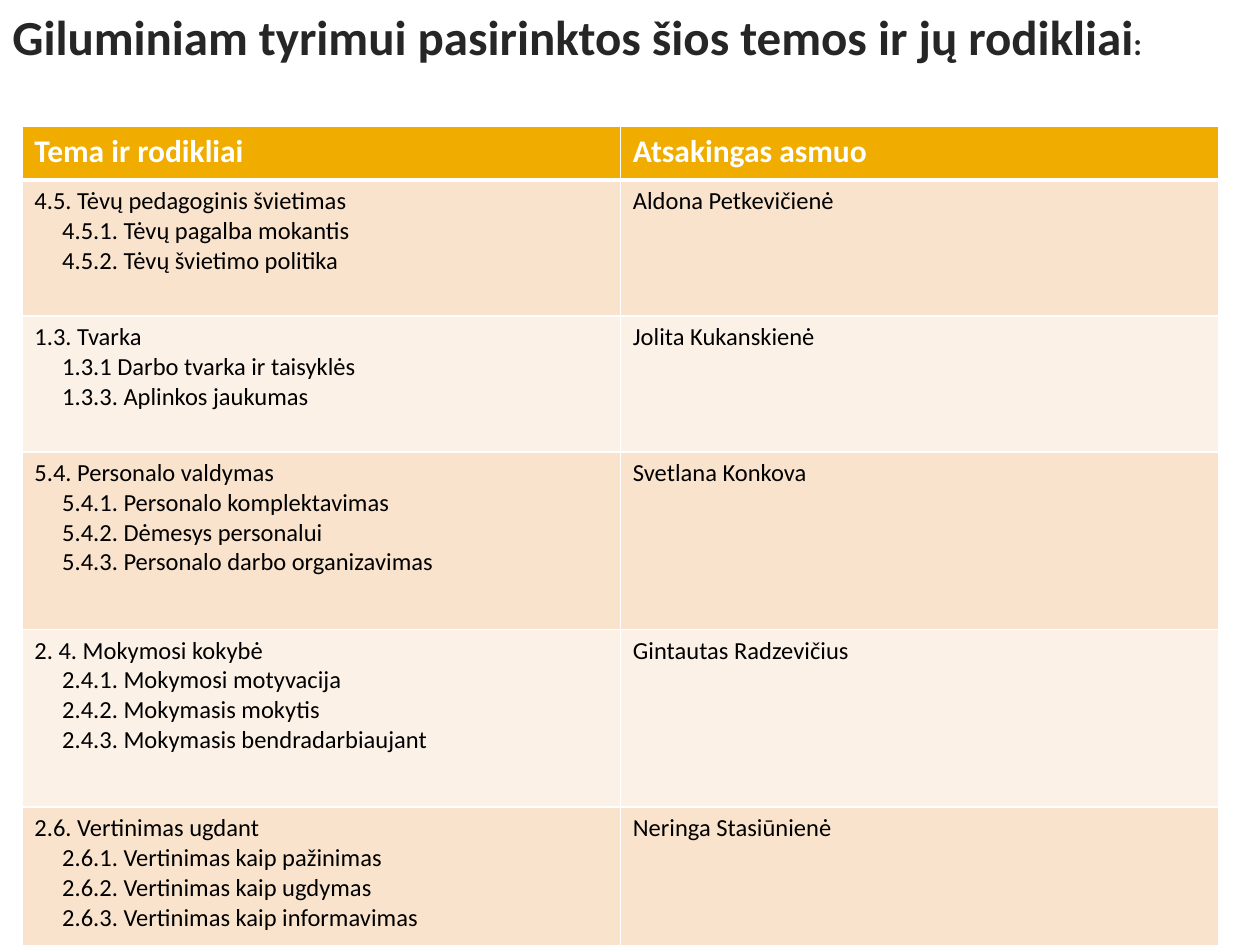
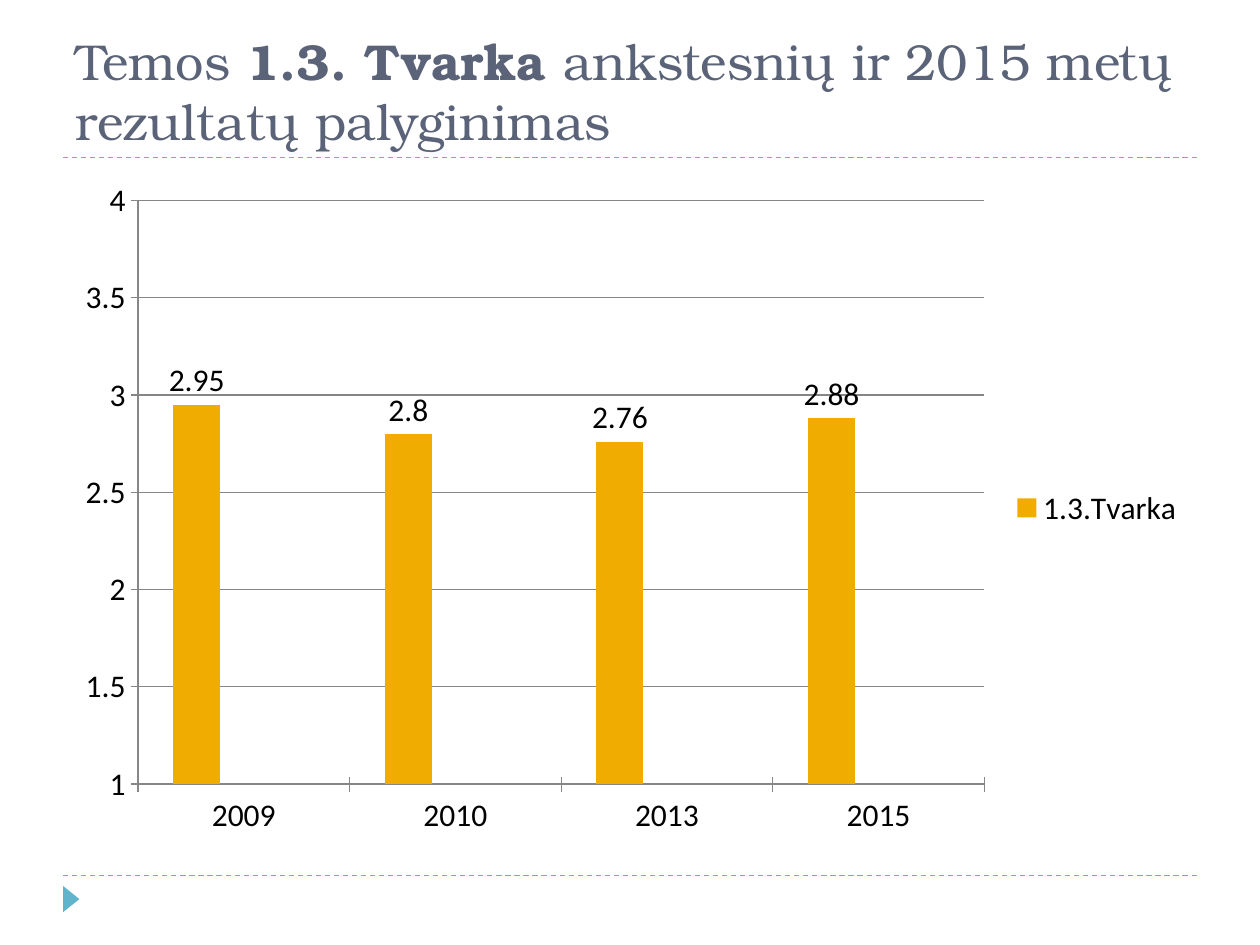
from dataclasses import dataclass

from lxml import etree
from pptx import Presentation
from pptx.chart.data import CategoryChartData
from pptx.dml.color import RGBColor
from pptx.enum.chart import (
    XL_CHART_TYPE, XL_LABEL_POSITION, XL_LEGEND_POSITION, XL_TICK_MARK)
from pptx.enum.dml import MSO_LINE
from pptx.enum.shapes import MSO_CONNECTOR, MSO_SHAPE
from pptx.enum.text import MSO_ANCHOR
from pptx.oxml.ns import qn
from pptx.util import Cm, Pt

COLUMN = XL_CHART_TYPE.COLUMN_CLUSTERED
ABOVE = XL_LABEL_POSITION.OUTSIDE_END
RIGHT = XL_LEGEND_POSITION.RIGHT
CROSS = XL_TICK_MARK.CROSS
DASH = MSO_LINE.DASH
STRAIGHT = MSO_CONNECTOR.STRAIGHT
ARROW = MSO_SHAPE.ISOSCELES_TRIANGLE
TOP, BOTTOM = MSO_ANCHOR.TOP, MSO_ANCHOR.BOTTOM


@dataclass(frozen=True)
class Theme:
    body: str = "Calibri"
    serif: str = "TeX Gyre Bonum"
    gold: str = "F0AD00"
    teal: str = "60B5CC"
    rose: str = "E66C7D"
    slate: str = "5A6378"
    dark: str = "262626"
    black: str = "000000"
    white: str = "FFFFFF"
    grid: str = "868686"
    bands: tuple = ("F9E3CC", "FCF1E7")
    head: float = 28
    title: float = 28.8
    label: float = 18
    small: float = 14


THEME = Theme()

TOPICS = [
    ("Aldona Petkevičienė", "4.5. Tėvų pedagoginis švietimas",
     "4.5.1. Tėvų pagalba mokantis", "4.5.2. Tėvų švietimo politika"),
    ("Jolita Kukanskienė", "1.3. Tvarka",
     "1.3.1 Darbo tvarka ir taisyklės", "1.3.3. Aplinkos jaukumas"),
    ("Svetlana Konkova", "5.4. Personalo valdymas",
     "5.4.1. Personalo komplektavimas", "5.4.2. Dėmesys personalui",
     "5.4.3. Personalo darbo organizavimas"),
    ("Gintautas Radzevičius", "2. 4. Mokymosi kokybė",
     "2.4.1. Mokymosi motyvacija", "2.4.2. Mokymasis mokytis",
     "2.4.3. Mokymasis bendradarbiaujant"),
    ("Neringa Stasiūnienė", "2.6. Vertinimas ugdant",
     "2.6.1. Vertinimas kaip pažinimas", "2.6.2. Vertinimas kaip ugdymas",
     "2.6.3. Vertinimas kaip informavimas"),
]

YEARS = ["2009", "2010", "2013", "2015"]
SERIES = [
    ("1.3.Tvarka", [2.95, 2.8, 2.76, 2.88], THEME.gold),
    ("Series 2", [None] * 4, THEME.teal),
    ("Series 3", [None] * 4, THEME.rose),
]


def rgb(code):
    return RGBColor.from_string(code)


def paint(shape, color):
    shape.fill.solid()
    shape.fill.fore_color.rgb = rgb(color)


def add_run(para, text, size, color, font=THEME.body, bold=False):
    run = para.add_run()
    run.text = text
    run.font.name = font
    run.font.size = Pt(size)
    run.font.bold = bold
    run.font.color.rgb = rgb(color)


# Dashed rules and corner arrow, shared by all slides
def add_rule(slide, y):
    rule = slide.shapes.add_connector(
        STRAIGHT, Cm(1.27), Cm(y), Cm(24.13), Cm(y))
    rule.line.color.rgb = rgb(THEME.teal)
    rule.line.width = Pt(0.75)
    rule.line.dash_style = DASH
    etree.SubElement(rule.element.spPr, qn("a:effectLst"))


def new_slide(deck):
    slide = deck.slides.add_slide(deck.slide_layouts[6])
    for y in (17.65, 3.18):
        add_rule(slide, y)
    arrow = slide.shapes.add_shape(
        ARROW, Cm(1.17), Cm(17.96), Cm(0.53), Cm(0.33))
    arrow.rotation = 90
    arrow.shadow.inherit = False
    paint(arrow, THEME.teal)
    arrow.line.fill.background()
    return slide


def add_title(slide, box, runs, anchor):
    frame = slide.shapes.add_textbox(*map(Cm, box)).text_frame
    frame.word_wrap = True
    frame.vertical_anchor = anchor
    for text, style in runs:
        add_run(frame.paragraphs[0], text, **style)


# Table of topics
def add_edges(cell, base):
    props = cell._tc.get_or_add_tcPr()
    for side, width in zip("LRTB", (1, 1, 1, base)):
        edge = etree.SubElement(
            props, qn(f"a:ln{side}"), w=str(Pt(width)))
        fill = etree.SubElement(edge, qn("a:solidFill"))
        etree.SubElement(fill, qn("a:srgbClr"), val=THEME.white)


def fill_cell(cell, lines, band, size, color, bold=False, base=1):
    add_edges(cell, base)
    paint(cell, band)
    frame = cell.text_frame
    for i, line in enumerate(lines):
        para = frame.add_paragraph() if i else frame.paragraphs[0]
        if i:
            para._p.get_or_add_pPr().set("marL", str(Cm(0.56)))
        add_run(para, line, size, color, bold=bold)


def add_topics(slide, heads, topics):
    tall = [1.09] + [0.84 * (len(t) - 1) + 0.22 for t in topics]
    table = slide.shapes.add_table(
        len(tall), len(heads), Cm(0.44), Cm(2.54),
        Cm(24.13), Cm(sum(tall))).table
    table.horz_banding = False
    for row, height in zip(table.rows, tall):
        row.height = Cm(height)
    for col, head in enumerate(heads):
        fill_cell(table.cell(0, col), [head], THEME.gold, THEME.label,
                  THEME.white, bold=True, base=3)
    for row, (person, *lines) in enumerate(topics, 1):
        band = THEME.bands[(row - 1) % 2]
        for col, part in enumerate((lines, [person])):
            fill_cell(table.cell(row, col), part, band,
                      THEME.small, THEME.black)


# Column chart of yearly results
def style_line(line):
    line.color.rgb = rgb(THEME.grid)
    line.width = Pt(0.75)


def hide_key(legend, index):
    entry = etree.Element(qn("c:legendEntry"))
    etree.SubElement(entry, qn("c:idx"), val=str(index))
    etree.SubElement(entry, qn("c:delete"), val="1")
    legend._element.insert(index, entry)


def add_columns(slide, years, series):
    data = CategoryChartData()
    data.categories = years
    for name, values, _ in series:
        data.add_series(name, values)
    chart = slide.shapes.add_chart(
        COLUMN, Cm(1.27), Cm(3.38), Cm(22.86), Cm(13.72), data).chart
    chart.has_title = False
    chart.font.name = THEME.body
    chart.font.size = Pt(THEME.label)
    chart.font.color.rgb = rgb(THEME.black)

    plot = chart.plots[0]
    plot.vary_by_categories = False
    plot.gap_width = 150
    for item, (_, _, color) in zip(plot.series, series):
        paint(item.format, color)
        item.invert_if_negative = False
    labels = plot.series[0].data_labels
    labels.show_value = True
    labels.position = ABOVE

    for axis in (chart.category_axis, chart.value_axis):
        axis.major_tick_mark = CROSS
        style_line(axis.format.line)
    scale = chart.value_axis
    scale.minimum_scale, scale.maximum_scale = 1, 4
    scale.major_unit = 0.5
    scale.has_major_gridlines = True
    style_line(scale.major_gridlines.format.line)

    chart.has_legend = True
    chart.legend.position = RIGHT
    chart.legend.include_in_layout = False
    for index in range(1, len(series)):
        hide_key(chart.legend, index)


def main():
    deck = Presentation()
    deck.slide_width, deck.slide_height = Cm(25.4), Cm(19.05)

    # Topics and the people in charge
    slide = new_slide(deck)
    strong = dict(size=THEME.head, color=THEME.dark, bold=True)
    add_title(slide, (0, 0, 25.4, 2.64), [
        ("Giluminiam tyrimui pasirinktos šios temos ir jų rodikliai", strong),
        (":", {**strong, "size": THEME.label}),
    ], TOP)
    add_topics(slide, ["Tema ir rodikliai", "Atsakingas asmuo"], TOPICS)

    # Results by year
    slide = new_slide(deck)
    plain = dict(size=THEME.title, color=THEME.slate, font=THEME.serif)
    add_title(slide, (1.27, 0.43, 22.86, 2.74), [
        ("Temos ", plain),
        ("1.3. Tvarka ", {**plain, "bold": True}),
        ("ankstesnių ir 2015 metų rezultatų palyginimas", plain),
    ], BOTTOM)
    add_columns(slide, YEARS, SERIES)

    deck.save("out.pptx")


if __name__ == "__main__":
    main()
